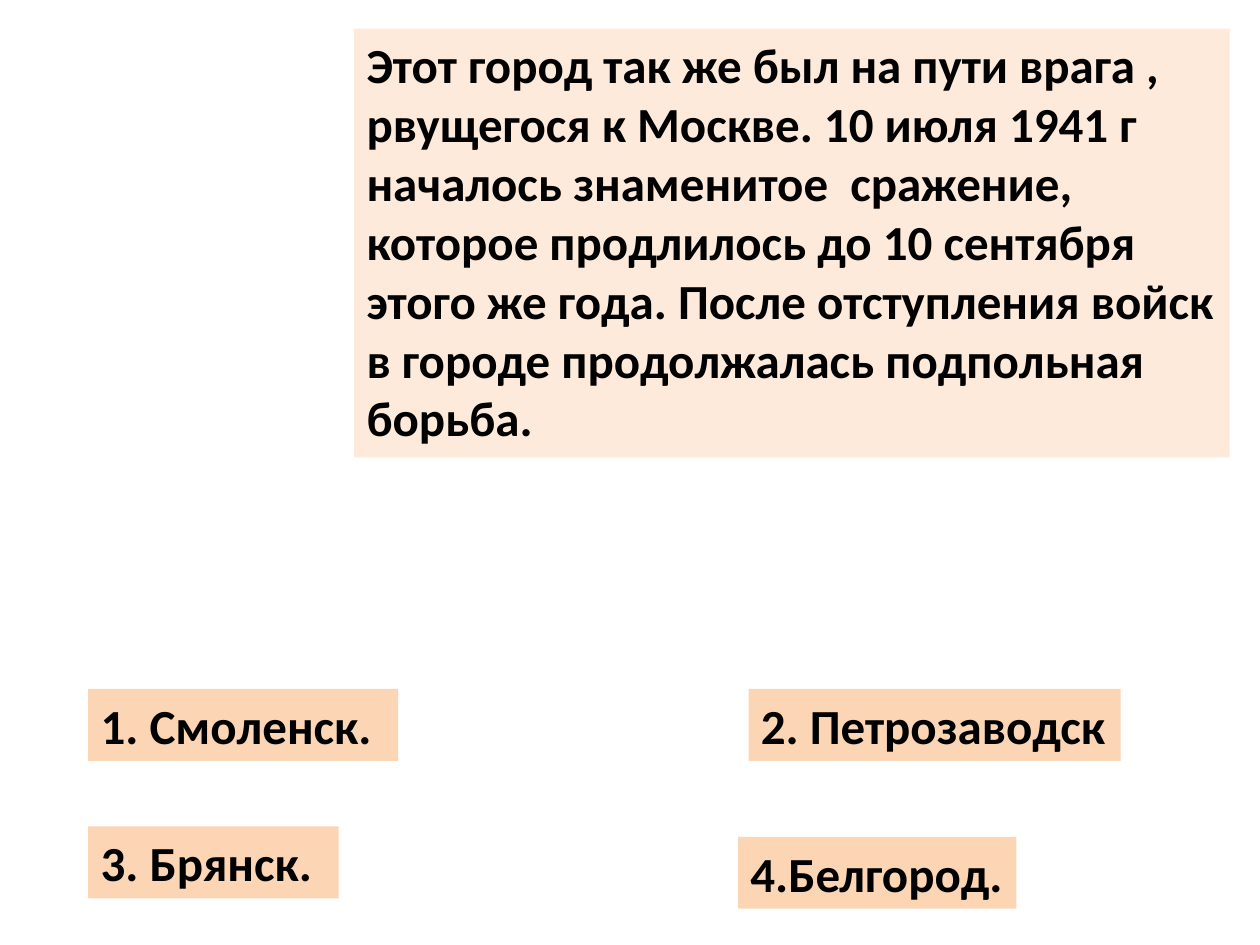
import pptx
import pptx.dml.color
import pptx.enum.text
import pptx.util

Cm = pptx.util.Cm

QUESTION = (
    "Этот город так же был на пути врага , рвущегося к Москве. "
    "10 июля 1941 г началось знаменитое  сражение, которое продлилось "
    "до 10 сентября этого же года. После отступления войск в городе "
    "продолжалась подпольная борьба."
)
ANSWERS = [
    ("1. Смоленск.", 1.78, 13.89, 6.25),
    ("2. Петрозаводск", 15.09, 13.89, 7.5),
    ("3. Брянск.", 1.78, 16.66, 5.05),
    ("4.Белгород.", 14.88, 16.87, 5.61),
]
ANSWER_HEIGHT = 1.45


def color(hex_string):
    return pptx.dml.color.RGBColor.from_string(hex_string)


def add_text_panel(slide, text, left, top, width, height, fill):
    shape = slide.shapes.add_textbox(Cm(left), Cm(top), Cm(width), Cm(height))
    shape.fill.solid()
    shape.fill.fore_color.rgb = color(fill)
    frame = shape.text_frame
    frame.word_wrap = True
    frame.auto_size = pptx.enum.text.MSO_AUTO_SIZE.SHAPE_TO_FIT_TEXT
    paragraph = frame.paragraphs[0]
    paragraph.text = text
    paragraph.font.name = "Calibri"
    paragraph.font.size = pptx.util.Pt(28)
    paragraph.font.bold = True
    paragraph.font.color.rgb = color("000000")


def main():
    presentation = pptx.Presentation()
    presentation.slide_width = Cm(25.4)
    presentation.slide_height = Cm(19.05)
    slide = presentation.slides.add_slide(presentation.slide_layouts[6])
    add_text_panel(slide, QUESTION, 7.14, 0.58, 17.65, 8.64, "FDEADA")
    for text, left, top, width in ANSWERS:
        add_text_panel(slide, text, left, top, width, ANSWER_HEIGHT, "FCD5B5")
    presentation.save("out.pptx")


if __name__ == "__main__":
    main()
